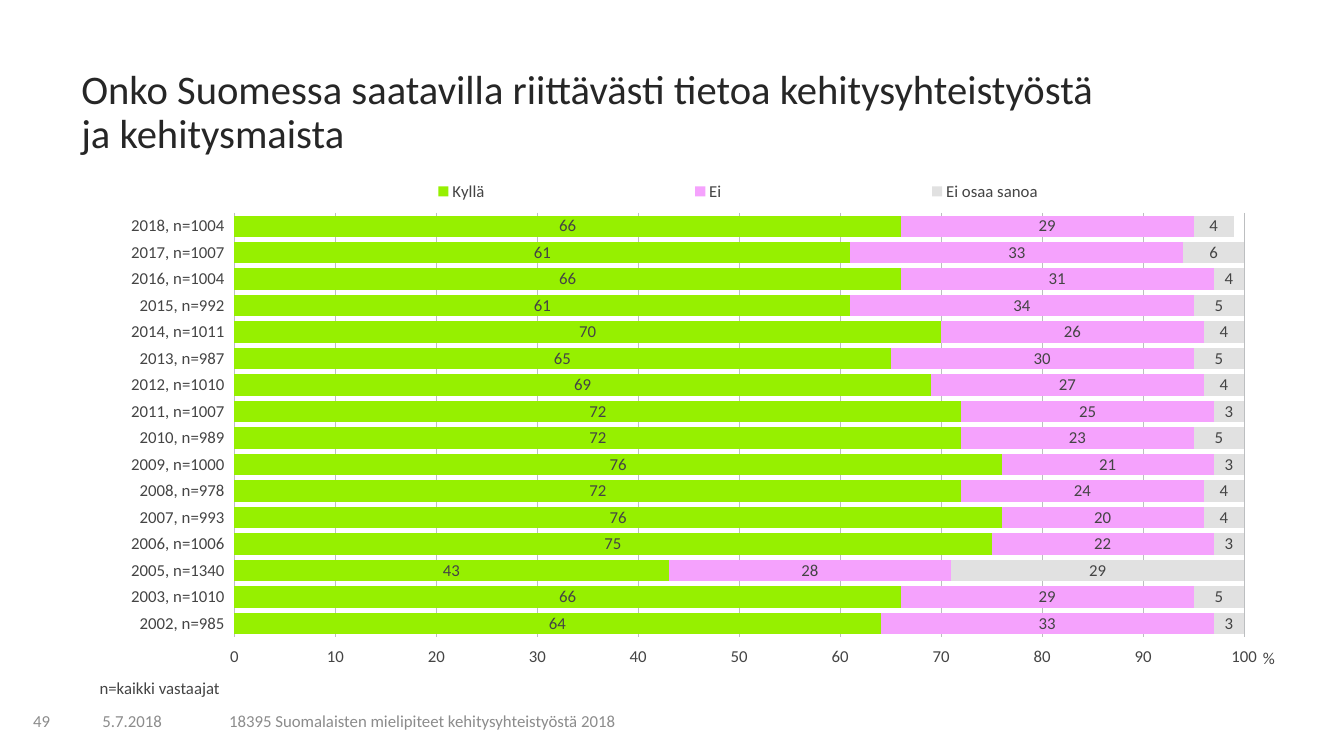
from lxml import etree
from pptx import Presentation
from pptx.chart.data import CategoryChartData
from pptx.dml.color import RGBColor
from pptx.enum.chart import (XL_AXIS_CROSSES as Crosses, XL_CHART_TYPE as ChartType,
                             XL_LABEL_POSITION as LabelPos, XL_LEGEND_POSITION as LegendPos,
                             XL_TICK_LABEL_POSITION as TickLabels, XL_TICK_MARK as TickMark)
from pptx.enum.text import MSO_ANCHOR as Anchor
from pptx.oxml.ns import qn
from pptx.util import Pt

# Content
FONT = "Calibri"
TEXT, GREY, DARK, GRID = "444444", "8C8C8C", "262626", "BCBEC0"
TITLE = "Onko Suomessa saatavilla riittävästi tietoa kehitysyhteistyöstä\vja kehitysmaista"
SERIES = [("Kyllä", "96F000"), ("Ei", "F5A2FD"), ("Ei osaa sanoa", "E1E1E1")]
ROWS = [
    ("2018, n=1004", 66, 29, 4), ("2017, n=1007", 61, 33, 6),
    ("2016, n=1004", 66, 31, 4), ("2015, n=992", 61, 34, 5),
    ("2014, n=1011", 70, 26, 4), ("2013, n=987", 65, 30, 5),
    ("2012, n=1010", 69, 27, 4), ("2011, n=1007", 72, 25, 3),
    ("2010, n=989", 72, 23, 5), ("2009, n=1000", 76, 21, 3),
    ("2008, n=978", 72, 24, 4), ("2007, n=993", 76, 20, 4),
    ("2006, n=1006", 75, 22, 3), ("2005, n=1340", 43, 28, 29),
    ("2003, n=1010", 66, 29, 5), ("2002, n=985", 64, 33, 3),
]
# text, (left, top, width, height), size, colour, anchor, line spacing
TEXTS = [
    (TITLE, (51, 46, 869, 49), 29, DARK, Anchor.TOP, 0.9),
    ("n=kaikki vastaajat", (64, 482, 661, 20), 12, TEXT, Anchor.TOP, 0.9),
    ("49", (16.5, 500.5, 32, 29), 12, GREY, Anchor.MIDDLE, 1.0),
    ("5.7.2018", (66, 500.5, 73, 29), 12, GREY, Anchor.MIDDLE, 1.0),
    ("18395 Suomalaisten mielipiteet kehitysyhteistyöstä 2018",
     (156.5, 500.5, 328, 29), 12, GREY, Anchor.MIDDLE, 1.0),
]
CHART_BOX = (51, 105, 869, 376.5)


def colour(code):
    return RGBColor.from_string(code)


def style(font, size, code):
    font.name, font.size, font.bold = FONT, Pt(size), False
    font.color.rgb = colour(code)


def add_text(page, text, box, size, code, anchor, spacing):
    frame = page.shapes.add_textbox(*map(Pt, box)).text_frame
    frame.word_wrap = True
    frame.vertical_anchor = anchor
    frame.text = text
    para = frame.paragraphs[0]
    para.line_spacing = spacing
    for span in para.runs:
        style(span.font, size, code)


def place(parent, after, inner=False, **fractions):
    """Lay out a chart part by fractions of the chart area."""
    for old in parent.findall(qn("c:layout")):
        parent.remove(old)
    layout = etree.Element(qn("c:layout"))
    manual = etree.SubElement(layout, qn("c:manualLayout"))
    if inner:
        etree.SubElement(manual, qn("c:layoutTarget")).set("val", "inner")
    for key in ("x", "y"):
        etree.SubElement(manual, qn(f"c:{key}Mode")).set("val", "edge")
    for key, value in fractions.items():
        etree.SubElement(manual, qn(f"c:{key}")).set("val", str(value))
    previous = parent.find(qn(after)) if after else None
    parent.insert(0 if previous is None else parent.index(previous) + 1, layout)


deck = Presentation()
deck.slide_width, deck.slide_height = Pt(960), Pt(540)
page = deck.slides.add_slide(deck.slide_layouts[6])

for entry in TEXTS:
    add_text(page, *entry)

# Stacked bars
names, *columns = zip(*ROWS)
data = CategoryChartData(number_format="#,##0")
data.categories = names
for (name, _), values in zip(SERIES, columns):
    data.add_series(name, values)
chart = page.shapes.add_chart(ChartType.BAR_STACKED, *map(Pt, CHART_BOX), data).chart
chart.has_title = False
style(chart.font, 12, TEXT)
plot = chart.plots[0]
plot.gap_width, plot.overlap, plot.vary_by_categories = 25, 100, False
for series, (_, code) in zip(plot.series, SERIES):
    series.format.fill.solid()
    series.format.fill.fore_color.rgb = colour(code)
    labels = series.data_labels
    labels.show_value, labels.position = True, LabelPos.CENTER
    labels.number_format, labels.number_format_is_linked = "#,##0", False
    style(labels.font, 12, TEXT)
plot_area = chart._chartSpace.chart.plotArea
place(plot_area, None, inner=True, x=0.134, y=0.126, w=0.83, h=0.81)

# Axes: years run downwards, percentages stand below the last year
years, percent = chart.category_axis, chart.value_axis
for axis in (years, percent):
    axis.major_tick_mark = axis.minor_tick_mark = TickMark.NONE
    axis.format.line.fill.background()
    style(axis.tick_labels.font, 12, TEXT)
years.reverse_order = True
years.crosses = Crosses.MAXIMUM
years.tick_label_position = TickLabels.LOW
percent.tick_label_position = TickLabels.HIGH
percent.minimum_scale, percent.maximum_scale, percent.major_unit = 0, 100.01, 10
percent.tick_labels.number_format = "General"
percent.tick_labels.number_format_is_linked = False
percent.has_major_gridlines = True
grid = percent.major_gridlines.format.line
grid.color.rgb, grid.width = colour(GRID), Pt(0.5)
unit = percent.axis_title
unit.text_frame.text = "%"
style(unit.text_frame.paragraphs[0].runs[0].font, 12, TEXT)
place(unit._element, "c:tx", x=0.977, y=0.95)

# Legend
chart.has_legend = True
legend = chart.legend
legend.position, legend.include_in_layout = LegendPos.TOP, False
style(legend.font, 12, TEXT)
place(legend._element, "c:legendPos", x=0.133, y=0.06, w=0.83, h=0.05)

deck.save("out.pptx")
